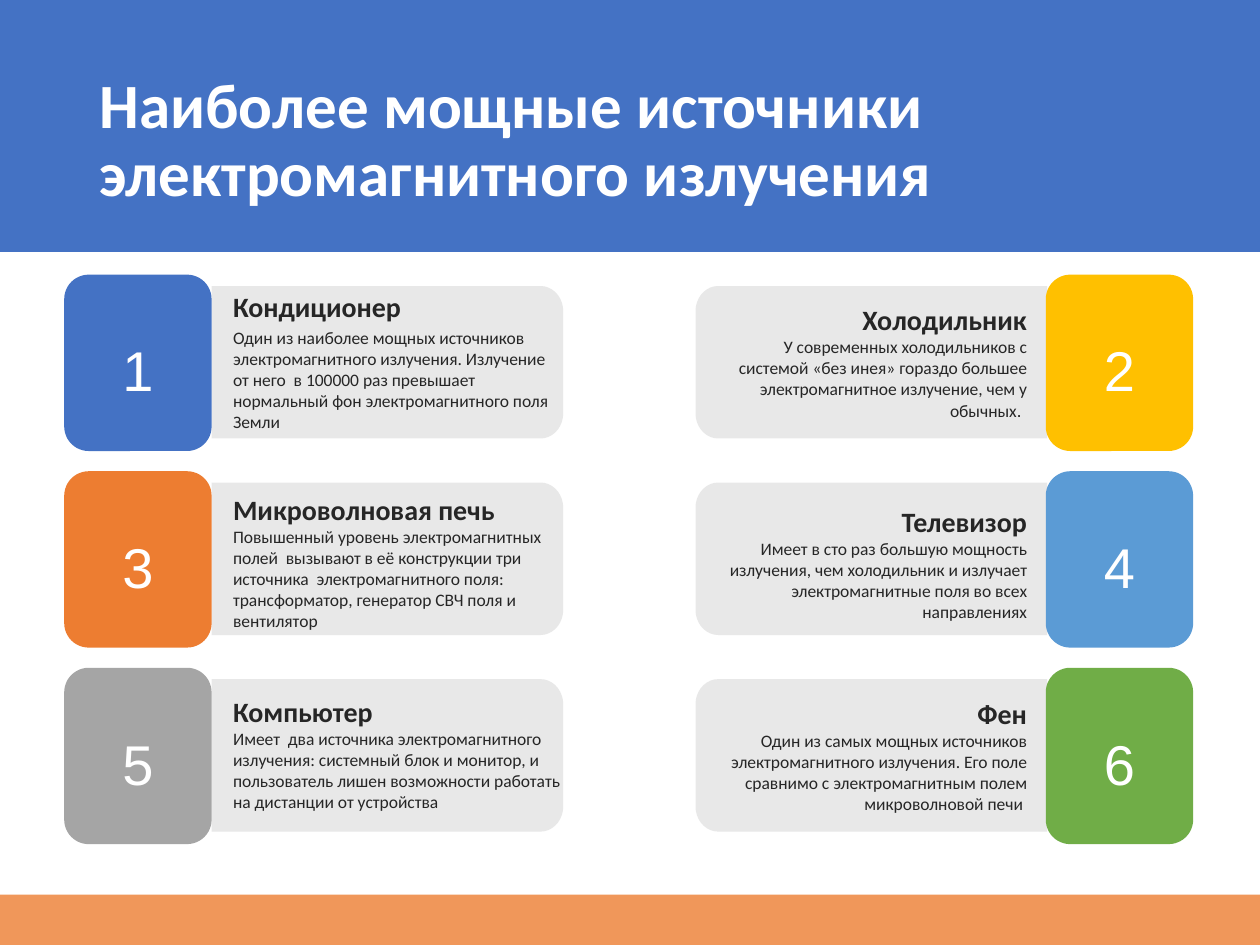
import math
from dataclasses import dataclass

import pptx
import pptx.dml.color
import pptx.enum.shapes
import pptx.enum.text
import pptx.oxml
import pptx.oxml.ns
import pptx.util

Pt = pptx.util.Pt
Align = pptx.enum.text.PP_ALIGN
Anchor = pptx.enum.text.MSO_ANCHOR
Preset = pptx.enum.shapes.MSO_SHAPE


@dataclass(frozen=True)
class Theme:
    blue: str = "4472C4"
    orange: str = "ED7D31"
    gray: str = "A5A5A5"
    gold: str = "FFC000"
    sky: str = "5B9BD5"
    green: str = "70AD47"
    panel: str = "E6E6E6"
    white: str = "FFFFFF"
    dark: str = "262626"
    font: str = "Calibri"
    number_font: str = "Arial"
    title_size: float = 36
    number_size: float = 32
    heading_size: float = 16
    body_size: float = 10
    ending_size: float = 10.5


theme = Theme()


def paint(shape, color, opacity=100):
    shape.shadow.inherit = False
    shape.fill.solid()
    shape.fill.fore_color.rgb = pptx.dml.color.RGBColor.from_string(color)
    shape.line.fill.background()
    if opacity < 100:
        color_element = shape.fill._xPr.find(".//" + pptx.oxml.ns.qn("a:srgbClr"))
        alpha = pptx.oxml.parse_xml(f'<a:alpha {pptx.oxml.ns.nsdecls("a")} val="{opacity * 1000}"/>')
        color_element.append(alpha)


def write(paragraph, text, *, size, color=theme.dark, font=theme.font, bold=False,
          align=Align.LEFT, line_spacing=1.0, before=0):
    paragraph.alignment = align
    paragraph.line_spacing = line_spacing
    if before:
        paragraph.space_before = Pt(before)
    run = paragraph.add_run()
    run.text = text
    run.font.size = Pt(size)
    run.font.name = font
    run.font.bold = bold
    run.font.color.rgb = pptx.dml.color.RGBColor.from_string(color)


presentation = pptx.Presentation()
presentation.slide_width = Pt(720)
presentation.slide_height = Pt(540)
slide = presentation.slides.add_slide(presentation.slide_layouts[6])
shapes = slide.shapes

for top, height, color, opacity in [(0, 144, theme.blue, 100), (511.2, 28.8, theme.orange, 80)]:
    band = shapes.add_shape(Preset.RECTANGLE, 0, Pt(top), Pt(720), Pt(height))
    paint(band, color, opacity)

title = shapes.add_textbox(Pt(49.68), Pt(28.8), Pt(620.64), Pt(104.4)).text_frame
title.word_wrap = True
title.vertical_anchor = Anchor.MIDDLE
write(title.paragraphs[0], "Наиболее мощные источники электромагнитного излучения",
      size=theme.title_size, color=theme.white, bold=True, line_spacing=0.9)

left_column = dict(tile=36.72, inner=120.96, outer=321.84, align=Align.LEFT)
right_column = dict(tile=597.6, inner=598.32, outer=397.44, align=Align.RIGHT)
columns = [left_column, right_column]

sources = [
    dict(color=theme.blue, box=(133.2, 165.6, 187.92, 82.08), before=2,
         heading="Кондиционер",
         body="Один из наиболее мощных источников электромагнитного излучения. Излучение от него  "
              "в 100000 раз превышает нормальный фон электромагнитного поля Земли"),
    dict(color=theme.gold, box=(416.88, 169.2, 169.92, 72), spacing=1.2,
         heading="Холодильник",
         body="У современных холодильников с системой «без инея» гораздо большее "
              "электромагнитное излучение, чем у обычных",
         ending=". "),
    dict(color=theme.orange, box=(133.2, 281.52, 188.64, 79.92),
         heading="Микроволновая печь",
         body="Повышенный уровень электромагнитных полей  вызывают в её конструкции три источника  "
              "электромагнитного поля: трансформатор, генератор СВЧ поля и вентилятор"),
    dict(color=theme.sky, box=(405.36, 284.4, 181.44, 72), spacing=1.2,
         heading="Телевизор",
         body="Имеет в сто раз большую мощность излучения, чем холодильник и излучает "
              "электромагнитные поля во всех направлениях"),
    dict(color=theme.gray, box=(133.2, 396.72, 187.92, 86.4),
         heading="Компьютер",
         body="Имеет  два источника электромагнитного излучения: системный блок и монитор, "
              "и пользователь лишен возможности работать на дистанции от устройства"),
    dict(color=theme.green, box=(416.16, 398.16, 170.64, 67.68),
         heading="Фен",
         body="Один из самых мощных источников электромагнитного излучения. Его поле сравнимо "
              "с электромагнитным полем микроволновой печи "),
]

row_pitch = 112.32
panel_top, panel_height = 163.44, 87.12
corner_width, corner_height = 12.96, 14.4
corner_angles = [math.radians(degrees) for degrees in range(0, 91, 10)]

for index, source in enumerate(sources):
    row, side = divmod(index, 2)
    column = columns[side]
    inner, outer, align = column["inner"], column["outer"], column["align"]
    top = panel_top + row * row_pitch
    bottom = top + panel_height
    direction = 1 if outer > inner else -1

    upper_corner = [(outer - direction * corner_width * (1 - math.sin(angle)),
                     top + corner_height * (1 - math.cos(angle))) for angle in corner_angles]
    lower_corner = [(x, top + bottom - y) for x, y in reversed(upper_corner)]
    outline = [(Pt(x), Pt(y)) for x, y in upper_corner + lower_corner + [(inner, bottom)]]
    builder = shapes.build_freeform(Pt(inner), Pt(top))
    builder.add_line_segments(outline, close=True)
    paint(builder.convert_to_shape(), theme.panel, 90)

    frame = shapes.add_textbox(*map(Pt, source["box"])).text_frame
    frame.word_wrap = True
    frame.margin_left = frame.margin_right = frame.margin_top = frame.margin_bottom = 0
    write(frame.paragraphs[0], source["heading"], size=theme.heading_size, bold=True,
          align=align, line_spacing=source.get("spacing", 1.0))
    body = frame.add_paragraph()
    write(body, source["body"], size=theme.body_size, align=align, before=source.get("before", 0))
    if "ending" in source:
        write(body, source["ending"], size=theme.ending_size, font=theme.number_font, align=align)

    tile = shapes.add_shape(Preset.ROUNDED_RECTANGLE, Pt(column["tile"]),
                            Pt(156.96 + row * row_pitch), Pt(84.24), Pt(100.8))
    paint(tile, source["color"])
    frame = tile.text_frame
    frame.margin_left = frame.margin_right = frame.margin_top = frame.margin_bottom = 0
    frame.vertical_anchor = Anchor.MIDDLE
    write(frame.paragraphs[0], str(index + 1), size=theme.number_size, color=theme.white,
          font=theme.number_font, align=Align.CENTER, line_spacing=1.2)

presentation.save("out.pptx")
